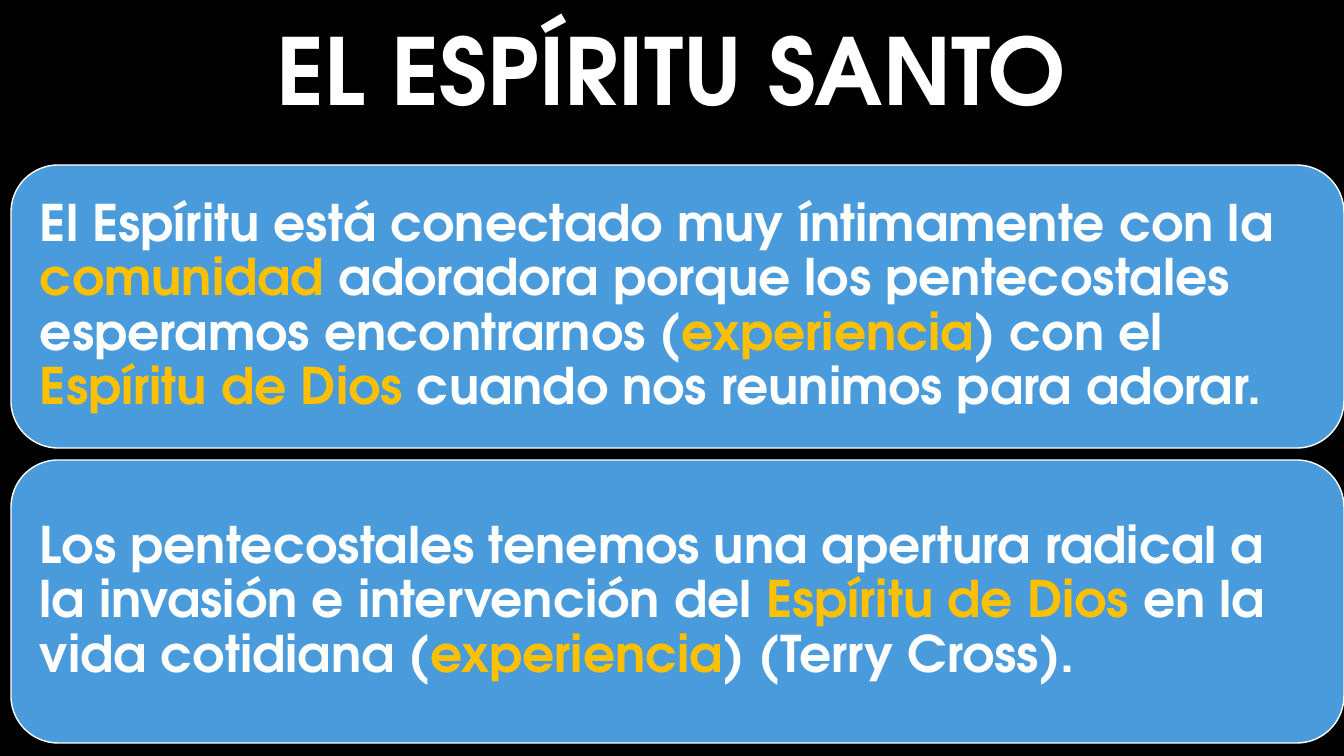
from pptx import Presentation
from pptx.dml.color import RGBColor
from pptx.enum.shapes import MSO_SHAPE
from pptx.enum.text import MSO_ANCHOR, PP_ALIGN
from pptx.util import Pt

ROUNDED = MSO_SHAPE.ROUNDED_RECTANGLE
MIDDLE = MSO_ANCHOR.MIDDLE
LEFT, CENTER = PP_ALIGN.LEFT, PP_ALIGN.CENTER

# Content: (words, is highlighted)
TITLE = [("EL ESPÍRITU SANTO", False)]
STATEMENTS = [
    [
        ("El Espíritu está conectado muy íntimamente con la ", False),
        ("comunidad", True),
        (" adoradora porque los pentecostales esperamos encontrarnos (", False),
        ("experiencia", True),
        (") con el ", False),
        ("Espíritu de Dios ", True),
        ("cuando nos reunimos para adorar.", False),
    ],
    [
        ("Los pentecostales tenemos una apertura radical a la invasión "
         "e intervención del ", False),
        ("Espíritu de Dios ", True),
        ("en la vida cotidiana (", False),
        ("experiencia", True),
        (") (Terry Cross).", False),
    ],
]


class Theme:
    font = "TeX Gyre Adventor"
    background = RGBColor.from_string("000000")
    card = RGBColor.from_string("4A9BDC")
    text = RGBColor.from_string("FFFFFF")
    highlight = RGBColor.from_string("FFC000")
    title_size = Pt(66)
    body_size = Pt(36)
    outline = Pt(1)


# Layout in px
SLIDE_W, SLIDE_H = 1344, 756
TITLE_BOX = (156, 10, 1031, 131)
CARD_LEFT, CARD_TOP, CARD_W, CARD_H = 11, 165, 1333, 283
CARD_GAP = 12
CARD_INSET = 15


def px(length):
    return round(length * 914400 / 100.8)


def write(frame, phrases, size, align, space_after=Pt(0)):
    """Fill a text frame with one paragraph of plain and highlighted phrases."""
    frame.word_wrap = True
    frame.vertical_anchor = MIDDLE
    paragraph = frame.paragraphs[0]
    paragraph_format = {
        "alignment": align, "line_spacing": 0.9, "space_after": space_after,
    }
    for key, value in paragraph_format.items():
        setattr(paragraph, key, value)
    for words, highlighted in phrases:
        phrase = paragraph.add_run()
        phrase.text = words
        for key, value in {"name": Theme.font, "size": size, "bold": True}.items():
            setattr(phrase.font, key, value)
        phrase.font.color.rgb = Theme.highlight if highlighted else Theme.text


def add_card(slide, index, statement):
    top = CARD_TOP + index * (CARD_H + CARD_GAP)
    card = slide.shapes.add_shape(
        ROUNDED, *map(px, (CARD_LEFT, top, CARD_W, CARD_H)))
    card.shadow.inherit = False
    card.fill.solid()
    card.fill.fore_color.rgb = Theme.card
    card.line.color.rgb = Theme.text
    card.line.width = Theme.outline
    for side in ("left", "top", "right", "bottom"):
        setattr(card.text_frame, f"margin_{side}", px(CARD_INSET))
    write(card.text_frame, statement, Theme.body_size, LEFT, Pt(12.6))


def main():
    deck = Presentation()
    deck.slide_width, deck.slide_height = px(SLIDE_W), px(SLIDE_H)
    slide = deck.slides.add_slide(deck.slide_layouts[6])
    slide.background.fill.solid()
    slide.background.fill.fore_color.rgb = Theme.background

    heading = slide.shapes.add_textbox(*map(px, TITLE_BOX))
    write(heading.text_frame, TITLE, Theme.title_size, CENTER)
    for index, statement in enumerate(STATEMENTS):
        add_card(slide, index, statement)
    deck.save("out.pptx")


if __name__ == "__main__":
    main()
